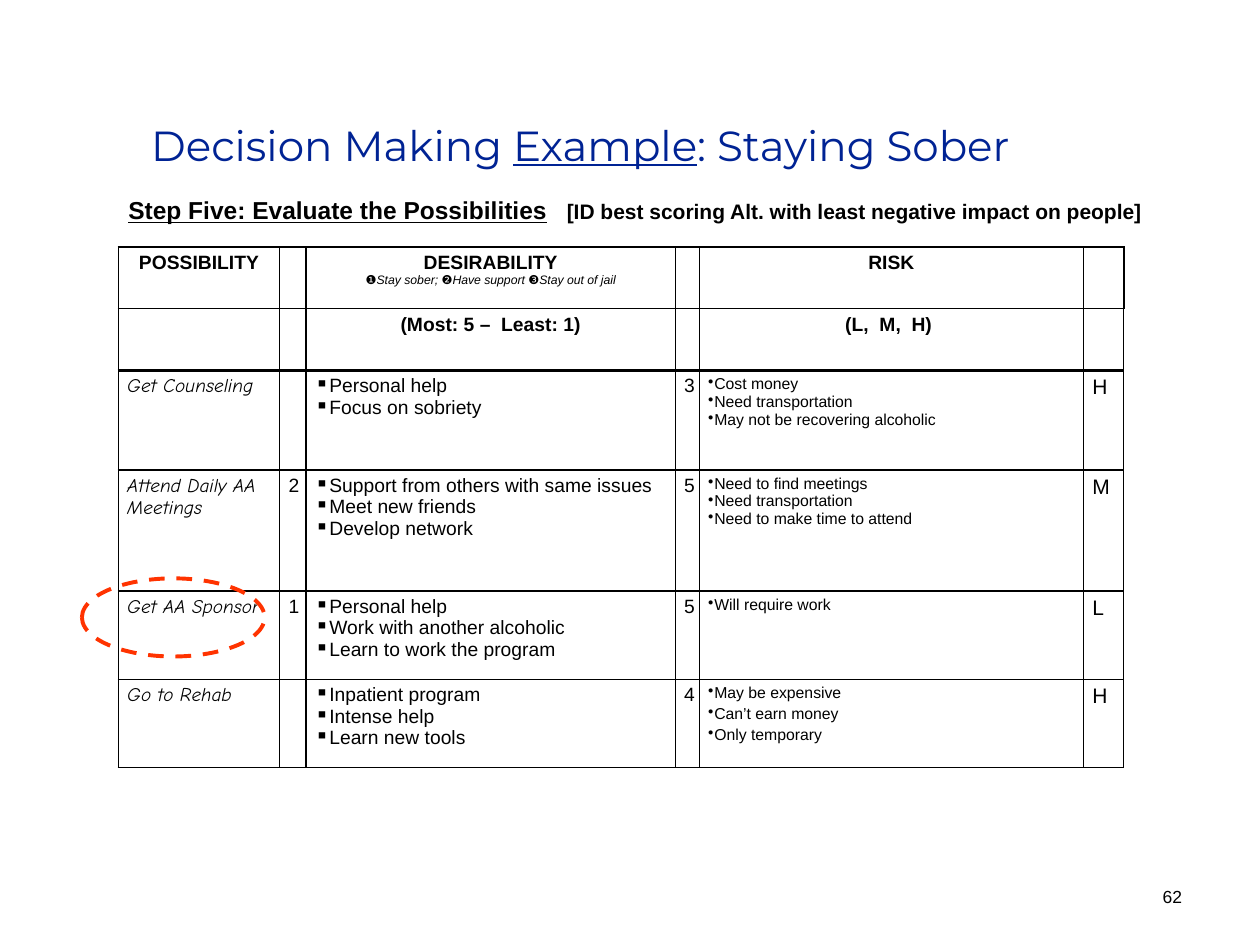
from lxml import etree
from pptx import Presentation
from pptx import util as u
from pptx.dml.color import RGBColor
from pptx.enum import dml, shapes, text
from pptx.oxml.ns import qn

INK, BLUE, RED = "000000", "002394", "FF3300"
COLS = [1.28, 0.21, 2.93, 0.19, 3.05, 0.32]
ROWS = [0.49, 0.49, 0.79, 0.96, 0.7, 0.7]
HEADS = [
    ["POSSIBILITY", "", "DESIRABILITY\n❶Stay sober; ❷Have support ❸Stay out of jail", "", "RISK", ""],
    ["", "", "(Most: 5 –  Least: 1)", "", "(L,  M,  H) ", ""],
]
BODY = [
    ["Get Counseling", "", "Personal help\nFocus on sobriety", "3",
     "Cost money\nNeed transportation\nMay not be recovering alcoholic", "H"],
    ["Attend Daily AA Meetings", "2",
     "Support from others with same issues\nMeet new friends\nDevelop network", "5",
     "Need to find meetings\nNeed transportation\nNeed to make time to attend", "M"],
    ["Get AA Sponsor", "1",
     "Personal help\nWork with another alcoholic\nLearn to work the program", "5",
     "Will require work", "L"],
    ["Go to Rehab", "", "Inpatient program\nIntense help\nLearn new tools", "4",
     "May be expensive\nCan’t earn money\nOnly temporary", "H"],
]
# Font, size, italic, bullet and hanging indent of each body column
SCORE = ("Arial", 11, False, None, 0)
STYLES = [("Comic Neue", 11, True, None, 0), SCORE, ("Arial", 11, False, "▪", 0.09),
          SCORE, ("Arial", 9, False, "•", 0.05), ("Arial", 12, False, None, 0)]


def color(code):
    return RGBColor.from_string(code)


def style(font, name, size, code=INK, bold=False, italic=False):
    font.name, font.size = name, u.Pt(size)
    font.bold, font.italic = bold, italic
    font.color.rgb = color(code)


def bullet(para, mark, hang):
    props = para._p.get_or_add_pPr()
    props.set("marL", str(u.Inches(hang)))
    props.set("indent", str(-u.Inches(hang)))
    etree.SubElement(props, qn("a:buChar")).set("char", mark)


def tab(para, pos):
    stops = etree.SubElement(para._p.get_or_add_pPr(), qn("a:tabLst"))
    etree.SubElement(stops, qn("a:tab"), pos=str(u.Inches(pos)), algn="l")


def border(cell, sides):
    props = cell._tc.get_or_add_tcPr()
    for side, width in zip("LRTB", sides):
        line = etree.SubElement(props, qn("a:ln" + side), w=str(u.Pt(width)))
        fill = etree.SubElement(line, qn("a:solidFill"))
        etree.SubElement(fill, qn("a:srgbClr"), val=INK)


def title(slide, box):
    shape = slide.shapes.title
    shape.left, shape.top, shape.width, shape.height = box
    frame = shape.text_frame
    frame.auto_size = text.MSO_AUTO_SIZE.NONE
    frame.vertical_anchor = text.MSO_ANCHOR.MIDDLE
    para = frame.paragraphs[0]
    para.alignment = text.PP_ALIGN.CENTER
    style(para.font, "Montserrat", 24, BLUE)
    for part in ("Decision Making ", "Example", ": Staying Sober "):
        run = para.add_run()
        run.text = part
        run.font.underline = part == "Example"


def step(slide, box):
    frame = slide.shapes.add_textbox(*box).text_frame
    frame.word_wrap = True
    para = frame.paragraphs[0]
    tab(para, 3.48)
    style(para.font, "Arial", 14, bold=True)
    head, gap, note = (para.add_run() for _ in range(3))
    head.text = "Step Five: Evaluate the Possibilities"
    head.font.underline = True
    gap.text = "\t"
    note.text = "[ID best scoring Alt. with least negative impact on people]"
    note.font.size = u.Pt(12)


def write(cell, row, col, words):
    frame = cell.text_frame
    for i, line in enumerate(words.split("\n")):
        para = frame.add_paragraph() if i else frame.paragraphs[0]
        para.text = line
        if row < len(HEADS):
            para.alignment = text.PP_ALIGN.CENTER
            style(para.font, "Arial", 7 if i else 11, bold=not i, italic=bool(i))
            continue
        name, size, italic, mark, hang = STYLES[col]
        if mark:
            bullet(para, mark, hang)
        # The last row's risks stand further apart
        if i and col == 4 and row == len(ROWS) - 1:
            para.space_before = u.Pt(1.8)
        style(para.font, name, size, italic=italic)


def grid(slide, box):
    table = slide.shapes.add_table(len(ROWS), len(COLS), *box).table
    table.first_row = table.horz_banding = False
    for item, share in zip(table.columns, COLS):
        item.width = int(box[2] * share / sum(COLS))
    for item, share in zip(table.rows, ROWS):
        item.height = int(box[3] * share / sum(ROWS))

    def edge(row, col):
        return 0.75 if row and (col % 2 or col == len(COLS)) else 1

    for row, line in enumerate(HEADS + BODY):
        for col, words in enumerate(line):
            cell = table.cell(row, col)
            cell.margin_left = cell.margin_right = u.Inches(0.07)
            cell.margin_top = cell.margin_bottom = u.Inches(0.04)
            border(cell, (edge(row, col), edge(row, col + 1),
                          2 if row == 2 else 1, 2 if row == 1 else 1))
            cell.fill.background()
            write(cell, row, col, words)


def ring(slide, box):
    oval = slide.shapes.add_shape(shapes.MSO_SHAPE.OVAL, *box)
    oval.shadow.inherit = False
    oval.fill.background()
    oval.line.color.rgb = color(RED)
    oval.line.width = u.Pt(2.25)
    oval.line.dash_style = dml.MSO_LINE.DASH


def number(slide, box):
    frame = slide.shapes.add_textbox(*box).text_frame
    frame.word_wrap = True
    para = frame.paragraphs[0]
    para.text = "62"
    para.alignment = text.PP_ALIGN.RIGHT
    style(para.font, "Arial", 10)


def main():
    deck = Presentation()
    deck.slide_width, deck.slide_height = u.Inches(10), u.Inches(7.5)
    slide = deck.slides.add_slide(deck.slide_layouts[5])

    def box(x, y, w, h):
        """Turn percentages of the slide into lengths."""
        wide, high = deck.slide_width / 100, deck.slide_height / 100
        return int(x * wide), int(y * high), int(w * wide), int(h * high)

    title(slide, box(1.7, 11.07, 89.6, 8.4))
    number(slide, box(79.2, 93.07, 15.6, 5.07))
    grid(slide, box(9.4, 26.13, 79.8, 55.1))
    step(slide, box(9.2, 20, 85, 4.53))
    ring(slide, box(6.5, 61.2, 14.5, 8.27))
    deck.save("out.pptx")


if __name__ == "__main__":
    main()
